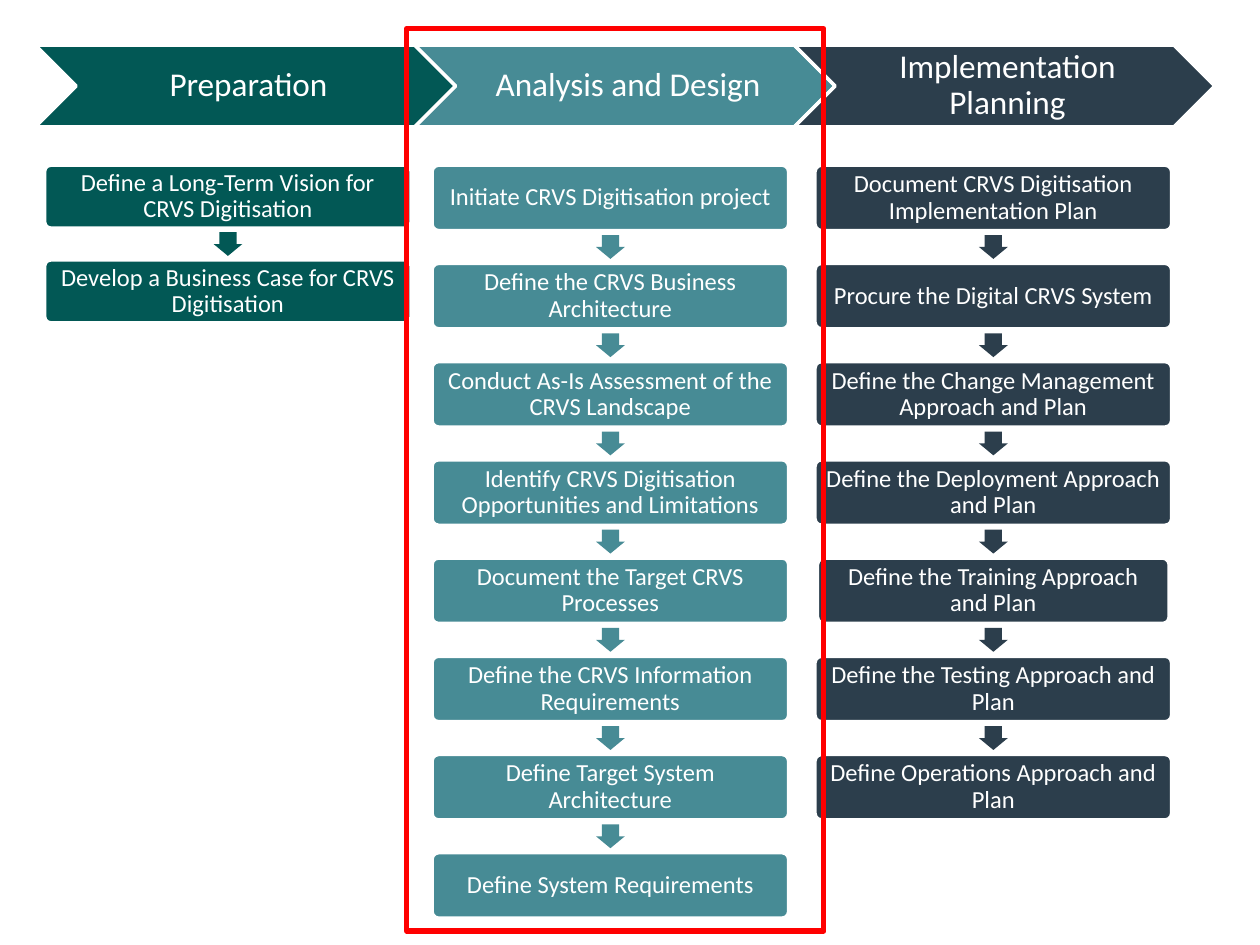
from pptx import Presentation
from pptx.dml.color import RGBColor
from pptx.enum.shapes import MSO_SHAPE
from pptx.enum.text import MSO_ANCHOR, PP_ALIGN
from pptx.util import Cm, Pt

CHEVRON, BOX = MSO_SHAPE.CHEVRON, MSO_SHAPE.ROUNDED_RECTANGLE
ARROW, RECT = MSO_SHAPE.RIGHT_ARROW, MSO_SHAPE.RECTANGLE
MIDDLE, CENTER = MSO_ANCHOR.MIDDLE, PP_ALIGN.CENTER

COLORS = {"green": "025855", "teal": "478B95", "navy": "2C3E4C",
          "white": "FFFFFF", "red": "FF0000"}

# Lengths are in centimetres
PHASES = [
    {"title": "Preparation", "color": "green",
     "left": 0.9, "width": 7.39, "height": 1.27, "pitch": 1.91,
     "steps": ["Define a Long-Term Vision for CRVS Digitisation",
               "Develop a Business Case for CRVS Digitisation"]},
    {"title": "Analysis and Design", "color": "teal",
     "left": 8.71, "width": 7.19, "height": 1.32, "pitch": 1.98,
     "steps": ["Initiate CRVS Digitisation project",
               "Define the CRVS Business Architecture",
               "Conduct As-Is Assessment of the CRVS Landscape",
               "Identify CRVS Digitisation Opportunities and Limitations",
               "Document the Target CRVS Processes",
               "Define the CRVS Information Requirements",
               "Define Target System Architecture",
               "Define System Requirements"]},
    {"title": "Implementation Planning", "color": "navy",
     "left": 16.43, "width": 7.19, "height": 1.32, "pitch": 1.98,
     "steps": ["Document CRVS Digitisation Implementation Plan",
               "Procure the Digital CRVS System",
               "Define the Change Management Approach and Plan",
               "Define the Deployment Approach and Plan",
               "Define the Training Approach and Plan",
               "Define the Testing Approach and Plan",
               "Define Operations Approach and Plan"]},
]
SIDE_TRIM = {"Define the Training Approach and Plan": 0.05}

HEAD_LEFT, HEAD_TOP, HEAD_W, HEAD_H, HEAD_PITCH = 0.71, 0.91, 8.48, 1.65, 7.65
STEPS_TOP = 3.33
ARROW_W, ARROW_H = 0.48, 0.58
FRAME = (8.2, 0.58, 8.41, 18.19)

HEAD_TEXT = {"size": 19, "margins": (0.2, 0.08, 0.08, 0.08)}
STEP_TEXT = {"size": 14, "margins": (0.15, 0.15, 0.15, 0.15)}


def rgb(name):
    return RGBColor.from_string(COLORS[name])


def add_shape(slide, kind, box, fill=None, line=None, weight=2, adjust=()):
    sp = slide.shapes.add_shape(kind, *(Cm(v) for v in box))
    sp.shadow.inherit = False
    if fill:
        sp.fill.solid()
        sp.fill.fore_color.rgb = rgb(fill)
    else:
        sp.fill.background()
    if line:
        sp.line.color.rgb = rgb(line)
        sp.line.width = Pt(weight)
    else:
        sp.line.fill.background()
    for i, value in enumerate(adjust):
        sp.adjustments[i] = value
    return sp


def write(sp, text, size, margins):
    tf = sp.text_frame
    tf.word_wrap = True
    tf.vertical_anchor = MIDDLE
    for side, value in zip(("left", "top", "right", "bottom"), margins):
        setattr(tf, f"margin_{side}", Cm(value))
    p = tf.paragraphs[0]
    p.alignment = CENTER
    p.line_spacing = 0.9
    r = p.add_run()
    r.text = text
    for name, value in {"name": "Calibri", "size": Pt(size)}.items():
        setattr(r.font, name, value)
    r.font.color.rgb = rgb("white")


def add_steps(slide, phase):
    """Stack the phase's boxes with a down arrow centred in each gap."""
    left, width, height = phase["left"], phase["width"], phase["height"]
    color, pitch = phase["color"], phase["pitch"]
    for i, step in enumerate(phase["steps"]):
        top = STEPS_TOP + i * pitch
        if i:
            gap_middle = top - (pitch - height) / 2
            sp = add_shape(slide, ARROW,
                           (left + (width - ARROW_W) / 2, gap_middle - ARROW_H / 2,
                            ARROW_W, ARROW_H), color, adjust=(0.6, 0.5))
            sp.rotation = 90
        trim = SIDE_TRIM.get(step, 0)
        sp = add_shape(slide, BOX, (left + trim, top, width - 2 * trim, height),
                       color, "white", adjust=(0.1,))
        write(sp, step, **STEP_TEXT)


def main():
    prs = Presentation()
    prs.slide_width, prs.slide_height = Cm(25.4), Cm(19.05)
    s = prs.slides.add_slide(prs.slide_layouts[6])
    for i, phase in enumerate(PHASES):
        sp = add_shape(s, CHEVRON, (HEAD_LEFT + i * HEAD_PITCH, HEAD_TOP, HEAD_W, HEAD_H),
                       phase["color"], "white", adjust=(0.5,))
        write(sp, phase["title"], **HEAD_TEXT)
        add_steps(s, phase)
    add_shape(s, RECT, FRAME, line="red", weight=3)
    prs.save("out.pptx")


if __name__ == "__main__":
    main()
